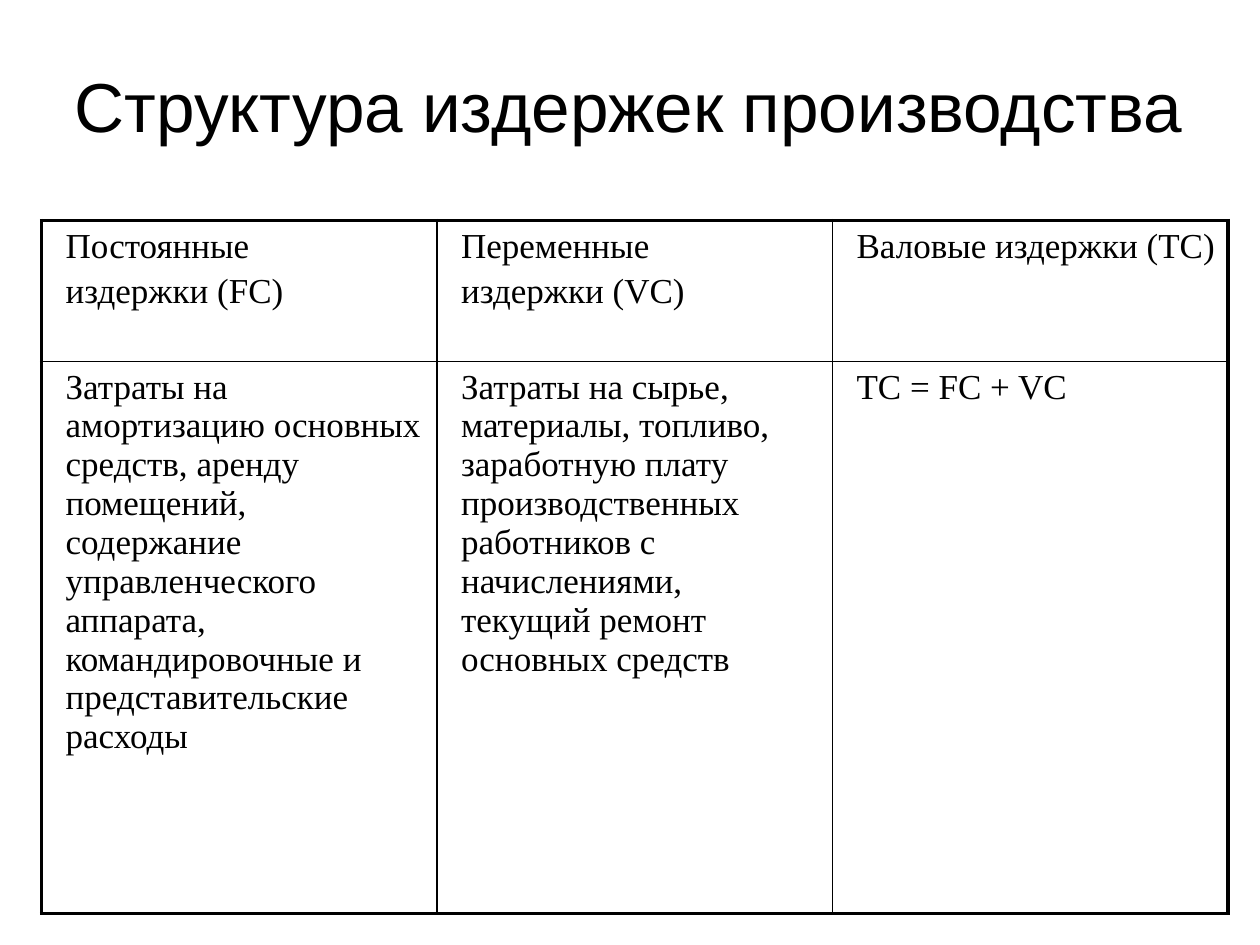
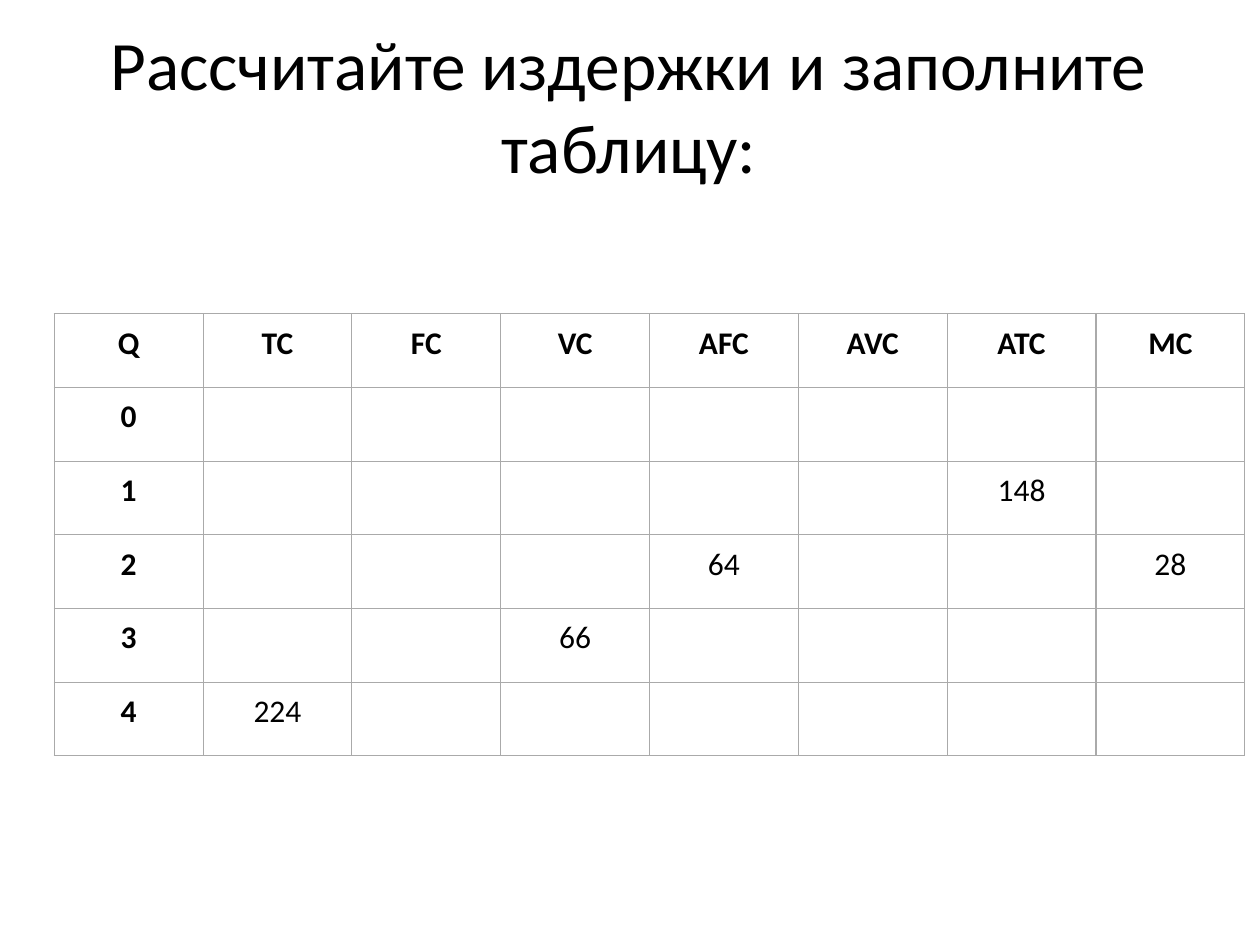
from lxml.etree import SubElement
from pptx import Presentation
from pptx.dml.color import RGBColor
from pptx.enum.text import MSO_ANCHOR, MSO_AUTO_SIZE, PP_ALIGN
from pptx.oxml.ns import qn
from pptx.util import Pt

# Shared look
BLACK, WHITE, GREY = "000000", "FFFFFF", "AAAAAA"
TITLE_PLACE = (34.6, 7.9, 649.4, 103.7)
TITLE_SIZE = 39.6
TITLE_ONLY = 5

# Slide 1: cost structure, each cell a list of paragraphs
COST_ROWS = [
    [["Постоянные", "издержки (FC)"],
     ["Переменные", "издержки (VC)"],
     ["Валовые издержки (ТС)"]],
    [["Затраты на амортизацию основных средств, аренду помещений, "
      "содержание управленческого аппарата, командировочные и "
      "представительские расходы"],
     ["Затраты на сырье, материалы, топливо, заработную плату "
      "производственных работников с начислениями, текущий ремонт "
      "основных средств"],
     ["ТС = FC + VC"]],
]

# Slide 2: exercise, known values by (quantity, measure)
MEASURES = ["Q", "TC", "FC", "VC", "AFC", "AVC", "ATC", "MC"]
QUANTITIES = range(5)
KNOWN_VALUES = {(1, "ATC"): "148", (2, "AFC"): "64", (2, "MC"): "28",
                (3, "VC"): "66", (4, "TC"): "224"}


def color(code):
    return RGBColor.from_string(code)


def add_span(para, text, font, size, bold=False):
    span = para.add_run()
    span.text = text
    span.font.name = font
    span.font.size = Pt(size)
    span.font.bold = bold
    span.font.color.rgb = color(BLACK)


def add_page(deck, title, font):
    page = deck.slides.add_slide(deck.slide_layouts[TITLE_ONLY])
    page.background.fill.solid()
    page.background.fill.fore_color.rgb = color(WHITE)
    box = page.shapes.title
    box.left, box.top, box.width, box.height = map(Pt, TITLE_PLACE)
    frame = box.text_frame
    frame.word_wrap = True
    frame.auto_size = MSO_AUTO_SIZE.NONE
    frame.vertical_anchor = MSO_ANCHOR.MIDDLE
    para = frame.paragraphs[0]
    para.alignment = PP_ALIGN.CENTER
    add_span(para, title, font, TITLE_SIZE)
    return page


def add_grid(page, left, top, column_widths, row_heights):
    table = page.shapes.add_table(
        len(row_heights), len(column_widths), Pt(left), Pt(top),
        Pt(sum(column_widths)), Pt(sum(row_heights))).table
    table.first_row = table.horz_banding = False
    for column, width in zip(table.columns, column_widths):
        column.width = Pt(width)
    for row, height in zip(table.rows, row_heights):
        row.height = Pt(height)
    return table


def set_borders(cell, code, left, right, top, bottom):
    """Draw the four sides; border lines must come before the cell fill."""
    properties = cell._tc.get_or_add_tcPr()
    sides = {"L": left, "R": right, "T": top, "B": bottom}
    for position, (side, width) in enumerate(sides.items()):
        line = SubElement(properties, qn("a:ln" + side), w=str(int(Pt(width))))
        fill = SubElement(line, qn("a:solidFill"))
        SubElement(fill, qn("a:srgbClr"), val=code)
        properties.insert(position, line)


def add_cost_table(page):
    outer, inner = 2.25, 1
    table = add_grid(page, 23.8, 126, [226] * 3, [80.6, 315.4])
    last_row, last_column = len(COST_ROWS) - 1, len(COST_ROWS[0]) - 1
    for row, cells in enumerate(COST_ROWS):
        for column, lines in enumerate(cells):
            cell = table.cell(row, column)
            cell.fill.background()
            set_borders(cell, BLACK,
                        left=outer if column == 0 else inner,
                        right=outer if column == last_column else inner,
                        top=outer if row == 0 else inner,
                        bottom=outer if row == last_row else inner)
            frame = cell.text_frame
            for index, line in enumerate(lines):
                para = frame.add_paragraph() if index else frame.paragraphs[0]
                para.space_before = Pt(4)
                # Paragraph indent
                para_properties = para._p.get_or_add_pPr()
                para_properties.set("marL", str(int(Pt(6.5))))
                para_properties.set("indent", "0")
                add_span(para, line, "Times New Roman", 20)


def add_exercise_table(page):
    rows = [MEASURES]
    for quantity in QUANTITIES:
        values = [KNOWN_VALUES.get((quantity, name), "") for name in MEASURES[1:]]
        rows.append([str(quantity)] + values)
    table = add_grid(page, 31, 179.3, [85.05] * len(MEASURES), [42.1] * len(rows))
    for row, values in enumerate(rows):
        for column, value in enumerate(values):
            cell = table.cell(row, column)
            cell.fill.solid()
            cell.fill.fore_color.rgb = color(WHITE)
            set_borders(cell, GREY, 0.75, 0.75, 0.75, 0.75)
            if value:
                cell.margin_left = cell.margin_right = Pt(3)
                cell.margin_top = cell.margin_bottom = Pt(6)
                para = cell.text_frame.paragraphs[0]
                para.alignment = PP_ALIGN.CENTER
                add_span(para, value, "Calibri", 18, bold=row == 0 or column == 0)


def main():
    deck = Presentation()
    deck.slide_width, deck.slide_height = Pt(720), Pt(540)
    add_cost_table(add_page(deck, "Структура издержек производства", "Arial"))
    add_exercise_table(
        add_page(deck, "Рассчитайте издержки и заполните таблицу:", "Calibri"))
    deck.save("out.pptx")


if __name__ == "__main__":
    main()
